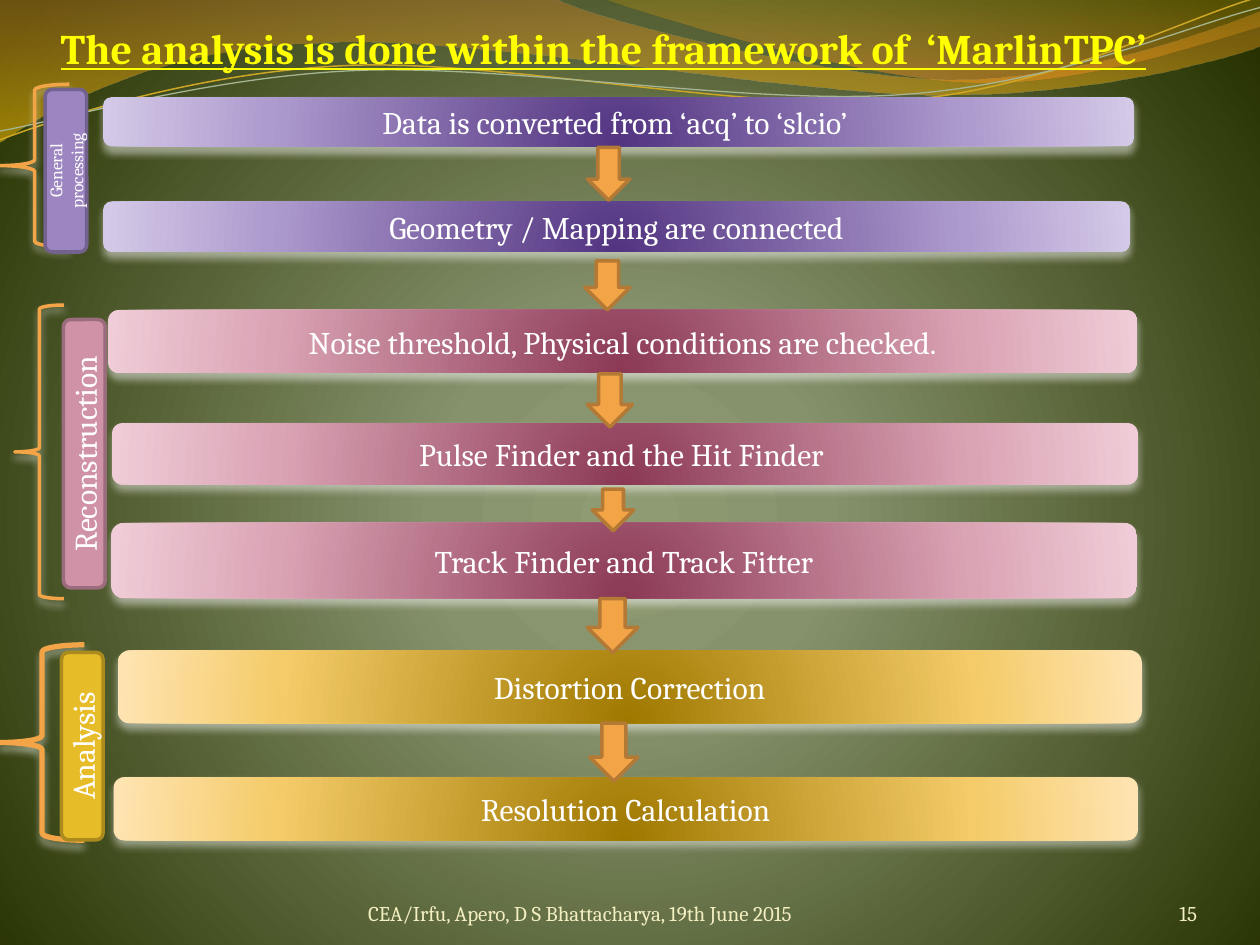
from lxml import etree
from pptx import Presentation
from pptx.dml.color import RGBColor
from pptx.enum import shapes, text
from pptx.oxml import ns
from pptx.util import Cm, Pt

KIND = shapes.MSO_SHAPE
MID = text.MSO_ANCHOR.MIDDLE
FONT = "Cambria"


def rgb(code):
    return RGBColor.from_string(code)


WHITE, YELLOW, CREAM = rgb("FFFFFF"), rgb("FFFF00"), rgb("F3EFC0")
ORANGE, BROWN = rgb("F3A447"), rgb("B47935")
GOLD, SAGE = rgb("CCA624"), rgb("A5B592")
OLIVE = [(0, rgb("8F9B72")), (25, rgb("86926C")), (100, rgb("273200"))]
AMBER = [(0, rgb("C07A28"), 45), (100, rgb("F7BF00"), 55)]
HONEY = [(0, rgb("C09709"), 30), (80, rgb("F59320"), 45)]

# Palette of a stage: bar gradient, label fill, label line
PURPLE = ([(0, rgb("523481")), (68, rgb("AE9BCE")), (100, rgb("D4C9E7"))],
          rgb("9C85C0"), rgb("73628E"))
ROSE = ([(0, rgb("8B3955")), (68, rgb("DBA4B5")), (100, rgb("EFCCD7"))],
        rgb("D092A7"), rgb("9A6C7C"))
MUSTARD = ([(0, rgb("9F7800")), (68, rgb("F4CB68")), (100, rgb("FFE4B2"))],
           rgb("E7BC29"), rgb("AB8B1E"))


def put(item, values):
    for key, value in values.items():
        setattr(item, key, value)


def place(box):
    return [Cm(n) for n in box]


def sub(node, tag, **values):
    return etree.SubElement(node, ns.qn(tag), {k: str(v) for k, v in values.items()})


def blend(fill, node, stops, rect=None):
    """Gradient fill: round towards rect (l, t, r, b), else top to bottom."""
    fill.solid()
    solid = node.find(ns.qn("a:solidFill"))
    grad = etree.Element(ns.qn("a:gradFill"), rotWithShape="1")
    node.replace(solid, grad)
    marks = sub(grad, "a:gsLst")
    for at, color, *alpha in stops:
        tint = sub(sub(marks, "a:gs", pos=at * 1000), "a:srgbClr", val=color)
        for part in alpha:
            sub(tint, "a:alpha", val=part * 1000)
    if rect:
        sides = {k: n * 1000 for k, n in zip("ltrb", rect)}
        sub(sub(grad, "a:path", path="circle"), "a:fillToRect", **sides)
    else:
        sub(grad, "a:lin", ang=5400000, scaled=0)


def glow(shape):
    """Pale soft shadow below the shape."""
    effect = shape._element.spPr.find(ns.qn("a:effectLst"))
    drop = sub(effect, "a:outerShdw", blurRad=Pt(4.5), dist=Pt(3),
               dir=5400000, rotWithShape=0)
    sub(sub(drop, "a:srgbClr", val=WHITE), "a:alpha", val=48000)


def write(shape, words, size, color, frame=None, align=None, **font):
    body = shape.text_frame
    put(body, {"word_wrap": True, **(frame or {})})
    para = body.paragraphs[0]
    para.alignment = align
    run = para.add_run()
    run.text = words
    put(run.font, {"name": FONT, "size": Pt(size), **font})
    run.font.color.rgb = color


def draw(slide, kind, box, fill=None, line=None, width=2):
    shape = slide.shapes.add_shape(kind, *place(box))
    finish(shape, fill, line, width)
    return shape


def finish(shape, fill=None, line=None, width=2):
    shape.shadow.inherit = False
    if fill is None:
        shape.fill.background()
    else:
        shape.fill.solid()
        shape.fill.fore_color.rgb = fill
    if line is None:
        shape.line.fill.background()
    else:
        shape.line.color.rgb = line
        shape.line.width = Pt(width)


def trace(slide, start, parts, close):
    """Outline in 1/100 inch; a part is one point or a curve of three."""
    path = slide.shapes.build_freeform(*start, scale=float(Cm(0.0254)))
    path.add_line_segments([p for part in parts for p in part], close=close)
    shape = path.convert_to_shape()
    lines = iter(list(shape._element.iter(ns.qn("a:lnTo"))))
    for part in parts:
        group = [next(lines) for _ in part]
        if len(part) == 3:
            bend = etree.Element(ns.qn("a:cubicBezTo"))
            group[0].addprevious(bend)
            for line in group:
                bend.append(line[0])
                line.getparent().remove(line)
    return shape


def waves(slide):
    left = [[(440, -1)],
            [(476, 17), (664, 63), (758, 63)], [(853, 63), (958, 26), (1000, 9)],
            [(1001, 36)],
            [(983, 44), (870, 76), (746, 75)], [(622, 75), (382, 28), (257, 34)],
            [(129, 36), (46, 83), (-1, 113)]]
    right = [[(509, 11), (682, 62), (769, 65)], [(856, 69), (961, 32), (1000, 21)],
             [(1000, 0)]]
    upper = [[(48, 93), (158, 57), (277, 52)], [(395, 47), (593, 89), (713, 80)],
             [(833, 71), (938, 15), (998, -2)]]
    lower = [[(47, 96), (164, 61), (283, 56)], [(403, 51), (597, 84), (717, 75)],
             [(836, 67), (941, 21), (1000, 6)]]
    for start, parts, stops in (((0, 0), left, AMBER), ((479, -1), right, HONEY)):
        shape = trace(slide, start, parts, True)
        finish(shape)
        blend(shape.fill, shape._element.spPr, stops)
    for start, parts, color, width in (((0, 111), upper, GOLD, 0.85),
                                       ((0, 104), lower, SAGE, 0.75)):
        finish(trace(slide, start, parts, False), None, color, width)


def heading(slide, box):
    title = slide.shapes.title
    put(title, dict(zip(("left", "top", "width", "height"), place(box))))
    slide.shapes._spTree.append(title._element)  # in front of the waves
    write(title, "The analysis is done within the framework of  ‘MarlinTPC’",
          24, YELLOW, {"word_wrap": False, "vertical_anchor": text.MSO_ANCHOR.TOP},
          text.PP_ALIGN.LEFT, bold=True, underline=True)


def footer(slide, box, words, align):
    flat = dict.fromkeys(("margin_left", "margin_top", "margin_right", "margin_bottom"), 0)
    write(slide.shapes.add_textbox(*place(box)), words, 12, CREAM,
          {**flat, "vertical_anchor": text.MSO_ANCHOR.BOTTOM}, align)


def stage(slide, top, theme, brace, label, bars):
    """Brace, upright label and bars, with heights measured from top."""
    stops, fill, line = theme
    middle = {"vertical_anchor": MID}
    # Bars
    for x, y, w, h, words in bars:
        bar = draw(slide, KIND.ROUNDED_RECTANGLE, (x, top + y, w, h))
        blend(bar.fill, bar._element.spPr, stops, (50, 130, 50, -30))
        glow(bar)
        write(bar, words, 18, WHITE, middle, text.PP_ALIGN.CENTER)
    # Brace
    x, w, h, width = brace
    glow(draw(slide, KIND.LEFT_BRACE, (x, top, w, h), None, ORANGE, width))
    # Label, turned about its centre
    x, y, w, h, words, size = label
    box = (x + (w - h) / 2, top + y + (h - w) / 2, h, w)
    tag = draw(slide, KIND.ROUNDED_RECTANGLE, box, fill, line)
    tag.rotation = 270
    inset = {"margin_left": Cm(0.3), "margin_right": Cm(0.3)}
    write(tag, words, size, WHITE, {**middle, **inset}, text.PP_ALIGN.CENTER)


def arrows(slide, boxes):
    for box in boxes:
        draw(slide, KIND.DOWN_ARROW, box, ORANGE, BROWN)


def main():
    deck = Presentation()
    put(deck, {"slide_width": Cm(25.4), "slide_height": Cm(19.05)})
    slide = deck.slides.add_slide(deck.slide_layouts[5])
    ground = slide.background.fill
    ground.solid()
    blend(ground, slide._element.find(".//" + ns.qn("p:bgPr")), OLIVE, (10, 110, 10, 100))
    waves(slide)
    heading(slide, (0.97, 0.33, 23.62, 1.27))
    footer(slide, (7.42, 17.65, 9.32, 1.02),
           "CEA/Irfu, Apero, D S Bhattacharya, 19th June 2015", text.PP_ALIGN.LEFT)
    footer(slide, (22.02, 17.65, 2.11, 1.02), "15", text.PP_ALIGN.RIGHT)
    stage(slide, 1.7, PURPLE, (0, 1.4, 3.28, 2),
          (0.91, 0.1, 0.84, 3.28, "General processing", 10),
          [(2.08, 0.26, 20.78, 0.99, "Data is converted from ‘acq’ to ‘slcio’ "),
           (2.08, 2.36, 20.7, 1.02, " Geometry / Mapping are connected ")])
    stage(slide, 6.15, ROSE, (0.3, 0.99, 5.92, 2),
          (1.28, 0.29, 0.84, 5.41, "Reconstruction", 18),
          [(2.18, 0.1, 20.75, 1.27, "Noise threshold, Physical conditions are checked."),
           (2.26, 2.38, 20.68, 1.24, "Pulse Finder and the Hit Finder "),
           (2.24, 4.39, 20.68, 1.52, "Track Finder and Track Fitter")])
    stage(slide, 13, MUSTARD, (0, 1.7, 3.94, 3),
          (1.24, 0.15, 0.84, 3.78, "Analysis", 18),
          [(2.37, 0.11, 20.65, 1.47, "Distortion Correction"),
           (2.29, 2.67, 20.65, 1.27, "Resolution Calculation")])
    arrows(slide, [(11.84, 2.97, 0.86, 1.07), (11.79, 5.26, 0.91, 0.99),
                   (11.84, 7.54, 0.91, 1.07), (11.94, 9.86, 0.84, 0.84),
                   (11.84, 12.07, 1.02, 1.09), (11.89, 14.58, 0.97, 1.17)])
    deck.save("out.pptx")


if __name__ == "__main__":
    main()
